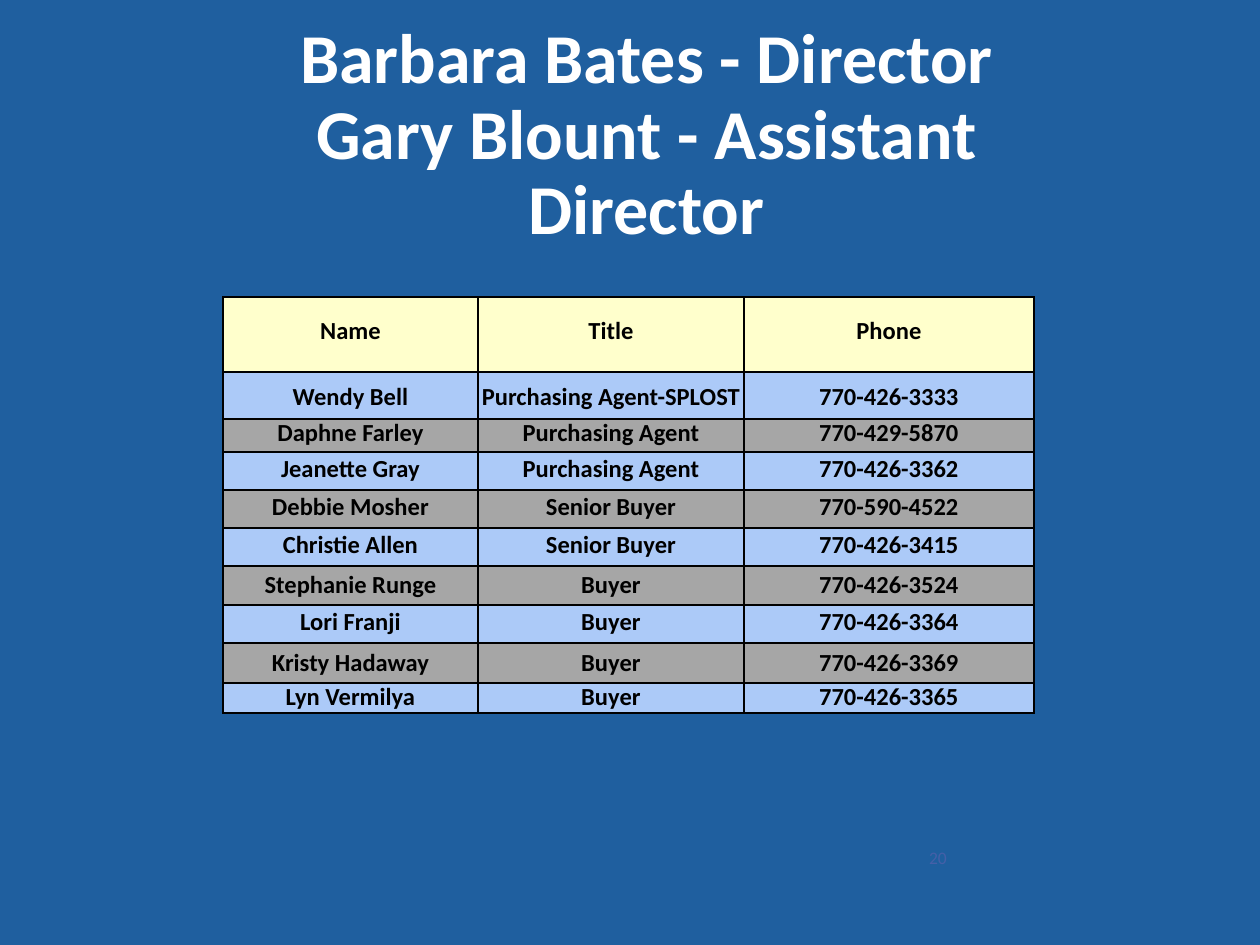
from dataclasses import dataclass

from lxml import etree
from pptx import Presentation
from pptx.dml.color import RGBColor
from pptx.enum.text import MSO_ANCHOR, PP_ALIGN
from pptx.oxml.ns import qn
from pptx.util import Emu, Pt

CENTER = PP_ALIGN.CENTER
TOP = MSO_ANCHOR.TOP
FONT_NAME = "Calibri"

BLUE = RGBColor(0x1F, 0x5F, 0x9F)
WHITE = RGBColor(0xFF, 0xFF, 0xFF)
BLACK = RGBColor(0x00, 0x00, 0x00)
CREAM = RGBColor(0xFF, 0xFF, 0xCC)
LIGHT_BLUE = RGBColor(0xAC, 0xCA, 0xF8)
GRAY = RGBColor(0xA6, 0xA6, 0xA6)
FAINT_BLUE = RGBColor(0x45, 0x60, 0xA8)


def px(length: int) -> Emu:
    return Emu(round(length * 914400 / 126))


@dataclass(frozen=True)
class Style:
    size: int
    color: RGBColor
    bold: bool = True
    line_spacing: float | None = None


@dataclass(frozen=True)
class Row:
    height: int
    top_inset: int
    texts: tuple[str, str, str]


TITLE_STYLE = Style(40, WHITE, line_spacing=43.2)
HEADER_STYLE = Style(14, BLACK)
STAFF_STYLE = Style(14, BLACK, line_spacing=16.5)
NUMBER_STYLE = Style(10, FAINT_BLUE, bold=False)

COLUMN_WIDTHS = (255, 266, 290)
ROWS = (
    Row(75, 19, ("Name", "Title", "Phone")),
    Row(47, 11, ("Wendy Bell", "Purchasing Agent-SPLOST", "770-426-3333")),
    Row(33, 0, ("Daphne Farley", "Purchasing Agent", "770-429-5870")),
    Row(38, 3, ("Jeanette Gray", "Purchasing Agent", "770-426-3362")),
    Row(38, 3, ("Debbie Mosher", "Senior Buyer", "770-590-4522")),
    Row(38, 3, ("Christie Allen", "Senior Buyer", "770-426-3415")),
    Row(39, 5, ("Stephanie Runge", "Buyer", "770-426-3524")),
    Row(38, 3, ("Lori Franji", "Buyer", "770-426-3364")),
    Row(40, 6, ("Kristy Hadaway", "Buyer", "770-426-3369")),
    Row(30, 0, ("Lyn Vermilya", "Buyer", "770-426-3365")),
)


def set_all(target, values: dict) -> None:
    for attribute, value in values.items():
        setattr(target, attribute, value)


def margins(top: int) -> dict:
    return {"margin_left": 0, "margin_top": px(top), "margin_right": 0, "margin_bottom": 0}


def write(frame, text: str, style: Style) -> None:
    paragraph = frame.paragraphs[0]
    paragraph.alignment = CENTER
    if style.line_spacing:
        paragraph.line_spacing = Pt(style.line_spacing)
    run = paragraph.add_run()
    run.text = text
    set_all(run.font, {"name": FONT_NAME, "size": Pt(style.size), "bold": style.bold})
    run.font.color.rgb = style.color


def add_text(slide, box: tuple[int, int, int, int], top: int, text: str, style: Style) -> None:
    frame = slide.shapes.add_textbox(*map(px, box)).text_frame
    set_all(frame, {"word_wrap": True, "vertical_anchor": TOP, **margins(top)})
    write(frame, text, style)


def add_borders(cell) -> None:
    properties = cell._tc.get_or_add_tcPr()
    for position, side in enumerate(("a:lnL", "a:lnR", "a:lnT", "a:lnB")):
        line = etree.Element(qn(side), w=str(Pt(1)))
        fill = etree.SubElement(line, qn("a:solidFill"))
        etree.SubElement(fill, qn("a:srgbClr"), val=str(BLACK))
        properties.insert(position, line)


def add_staff_table(slide, left: int, top: int) -> None:
    width, height = sum(COLUMN_WIDTHS), sum(row.height for row in ROWS)
    table = slide.shapes.add_table(
        len(ROWS), len(COLUMN_WIDTHS), px(left), px(top), px(width), px(height)
    ).table
    for column, column_width in zip(table.columns, COLUMN_WIDTHS):
        column.width = px(column_width)
    for index, row in enumerate(ROWS):
        table.rows[index].height = px(row.height)
        band = CREAM if index == 0 else LIGHT_BLUE if index % 2 else GRAY
        style = STAFF_STYLE if index else HEADER_STYLE
        for cell, text in zip(table.rows[index].cells, row.texts):
            set_all(cell, {"vertical_anchor": TOP, **margins(row.top_inset)})
            cell.fill.solid()
            cell.fill.fore_color.rgb = band
            add_borders(cell)
            write(cell.text_frame, text, style)


def main() -> None:
    deck = Presentation()
    set_all(deck, {"slide_width": px(1260), "slide_height": px(945)})
    slide = deck.slides.add_slide(deck.slide_layouts[6])
    slide.background.fill.solid()
    slide.background.fill.fore_color.rgb = BLUE
    add_text(
        slide,
        (296, 11, 701, 238),
        11,
        "Barbara Bates - Director Gary Blount - Assistant Director",
        TITLE_STYLE,
    )
    add_staff_table(slide, 223, 297)
    add_text(slide, (918, 847, 40, 22), 0, "20", NUMBER_STYLE)
    deck.save("out.pptx")


if __name__ == "__main__":
    main()
